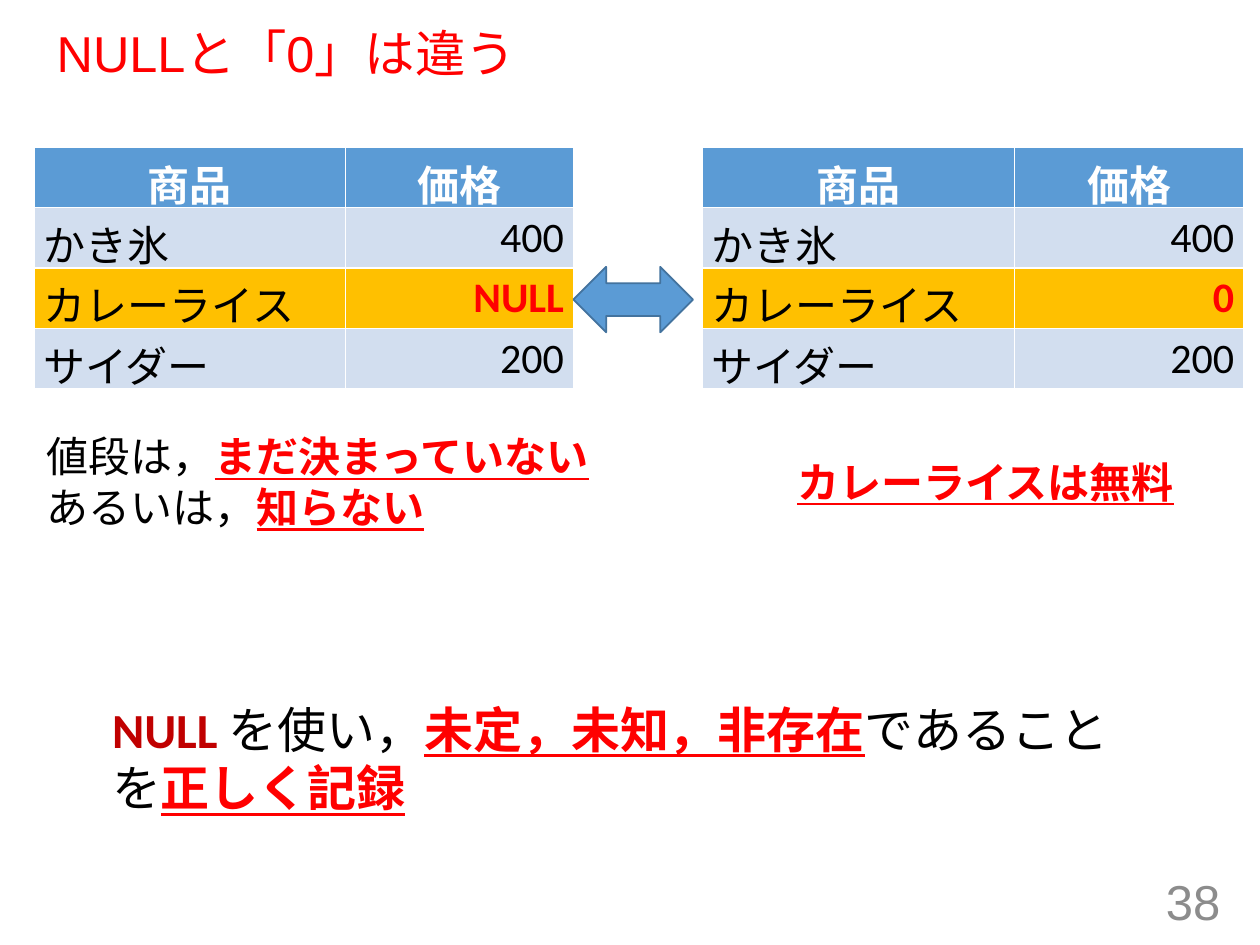
from pptx import Presentation
from pptx.dml.color import RGBColor
from pptx.enum.shapes import MSO_SHAPE
from pptx.enum.text import MSO_ANCHOR, MSO_AUTO_SIZE, PP_ALIGN
from pptx.util import Cm, Pt

RED = RGBColor(0xFF, 0x00, 0x00)
DARK_RED = RGBColor(0xC0, 0x00, 0x00)
BLACK = RGBColor(0x00, 0x00, 0x00)
WHITE = RGBColor(0xFF, 0xFF, 0xFF)
GRAY = RGBColor(0x8C, 0x8C, 0x8C)
BLUE = RGBColor(0x5B, 0x9B, 0xD5)
DARK_BLUE = RGBColor(0x43, 0x73, 0x9E)
PALE_BLUE = RGBColor(0xD2, 0xDE, 0xEF)
AMBER = RGBColor(0xFF, 0xC0, 0x00)

PLAIN = (BLACK, False, False)
STRONG = (RED, True, False)
MARKED = (RED, True, True)
KEYWORD = (DARK_RED, True, False)
HEADING = (WHITE, True, False)


class SlideBuilder:
    heading_font = "Arial"
    body_font = "Calibri"

    def __init__(self, slide):
        self.slide = slide

    def format_span(self, span, size, look, font=body_font):
        color, bold, underline = look
        span.font.name = font
        span.font.size = Pt(size)
        span.font.bold = bold
        span.font.underline = underline
        span.font.color.rgb = color

    def place(self, shape, left, top, width, height):
        shape.left, shape.top = Cm(left), Cm(top)
        shape.width, shape.height = Cm(width), Cm(height)

    def title(self, text, *area):
        title = self.slide.shapes.title
        self.place(title, *area)
        frame = title.text_frame
        frame.text = text
        frame.vertical_anchor = MSO_ANCHOR.MIDDLE
        para = frame.paragraphs[0]
        para.alignment = PP_ALIGN.LEFT
        para.line_spacing = 0.9
        self.format_span(para.runs[0], 28.8, (RED, False, False), self.heading_font)

    def text(self, lines, size, *area, wrap=False):
        box = self.slide.shapes.add_textbox(*map(Cm, area))
        frame = box.text_frame
        frame.word_wrap = wrap
        frame.auto_size = MSO_AUTO_SIZE.SHAPE_TO_FIT_TEXT
        for index, line in enumerate(lines):
            para = frame.add_paragraph() if index else frame.paragraphs[0]
            for words, look in line:
                span = para.add_run()
                span.text = words
                self.format_span(span, size, look)

    def page_number(self, number, *area):
        box = self.slide.shapes.add_textbox(*map(Cm, area))
        frame = box.text_frame
        frame.word_wrap = True
        frame.vertical_anchor = MSO_ANCHOR.MIDDLE
        frame.text = number
        para = frame.paragraphs[0]
        para.alignment = PP_ALIGN.RIGHT
        self.format_span(para.runs[0], 28, (GRAY, False, False), self.heading_font)

    def cell(self, cell, text, fill, look, alignment):
        cell.fill.solid()
        cell.fill.fore_color.rgb = fill
        cell.margin_left = cell.margin_right = Cm(0.19)
        cell.margin_top = cell.margin_bottom = Cm(0.1)
        cell.text = text
        para = cell.text_frame.paragraphs[0]
        para.alignment = alignment
        self.format_span(para.runs[0], 24, look)

    def price_table(self, curry_price, left, top, widths, row_height):
        rows = [("商品", "価格"), ("かき氷", "400"),
                ("カレーライス", curry_price), ("サイダー", "200")]
        fills = [BLUE, PALE_BLUE, AMBER, PALE_BLUE]
        table = self.slide.shapes.add_table(
            len(rows), len(widths), Cm(left), Cm(top),
            Cm(sum(widths)), Cm(row_height * len(rows))).table
        for column, width in zip(table.columns, widths):
            column.width = Cm(width)
        for index, ((product, price), fill) in enumerate(zip(rows, fills)):
            table.rows[index].height = Cm(row_height)
            if index == 0:
                styles = [(HEADING, PP_ALIGN.CENTER)] * 2
            else:
                price_look = STRONG if fill == AMBER else PLAIN
                styles = [(PLAIN, PP_ALIGN.LEFT), (price_look, PP_ALIGN.RIGHT)]
            for column, (text, style) in enumerate(zip((product, price), styles)):
                self.cell(table.cell(index, column), text, fill, *style)

    def double_arrow(self, *area):
        arrow = self.slide.shapes.add_shape(MSO_SHAPE.LEFT_RIGHT_ARROW, *map(Cm, area))
        arrow.shadow.inherit = False
        arrow.fill.solid()
        arrow.fill.fore_color.rgb = BLUE
        arrow.line.color.rgb = DARK_BLUE
        arrow.line.width = Pt(1)


def main():
    deck = Presentation()
    deck.slide_width, deck.slide_height = Cm(25.4), Cm(19.05)
    page = SlideBuilder(deck.slides.add_slide(deck.slide_layouts[5]))

    page.title("NULLと「0」は違う", 0.89, 0.48, 23.5, 1.3)
    page.page_number("38", 19.13, 17.65, 5.72, 1.02)
    page.price_table("NULL", 0.69, 2.97, (6.27, 4.6), 1.2)
    page.text([[("値段は，", PLAIN), ("まだ決まっていない", MARKED)],
               [("あるいは，", PLAIN), ("知らない", MARKED)]],
              24, 0.69, 8.56, 11.63, 2.31)
    page.price_table("0", 14.15, 2.97, (6.3, 4.62), 1.2)
    page.text([[("カレーライスは無料", MARKED)]], 24, 15.82, 9.07, 8.2, 1.27)
    page.double_arrow(11.56, 5.38, 2.41, 1.32)
    page.text([[("NULL ", KEYWORD), ("を使い，", PLAIN), ("未定，未知，非存在", MARKED),
                ("であることを", PLAIN), ("正しく記録", MARKED)]],
              28, 2.01, 13.97, 21.26, 2.64, wrap=True)
    deck.save("out.pptx")


if __name__ == "__main__":
    main()
